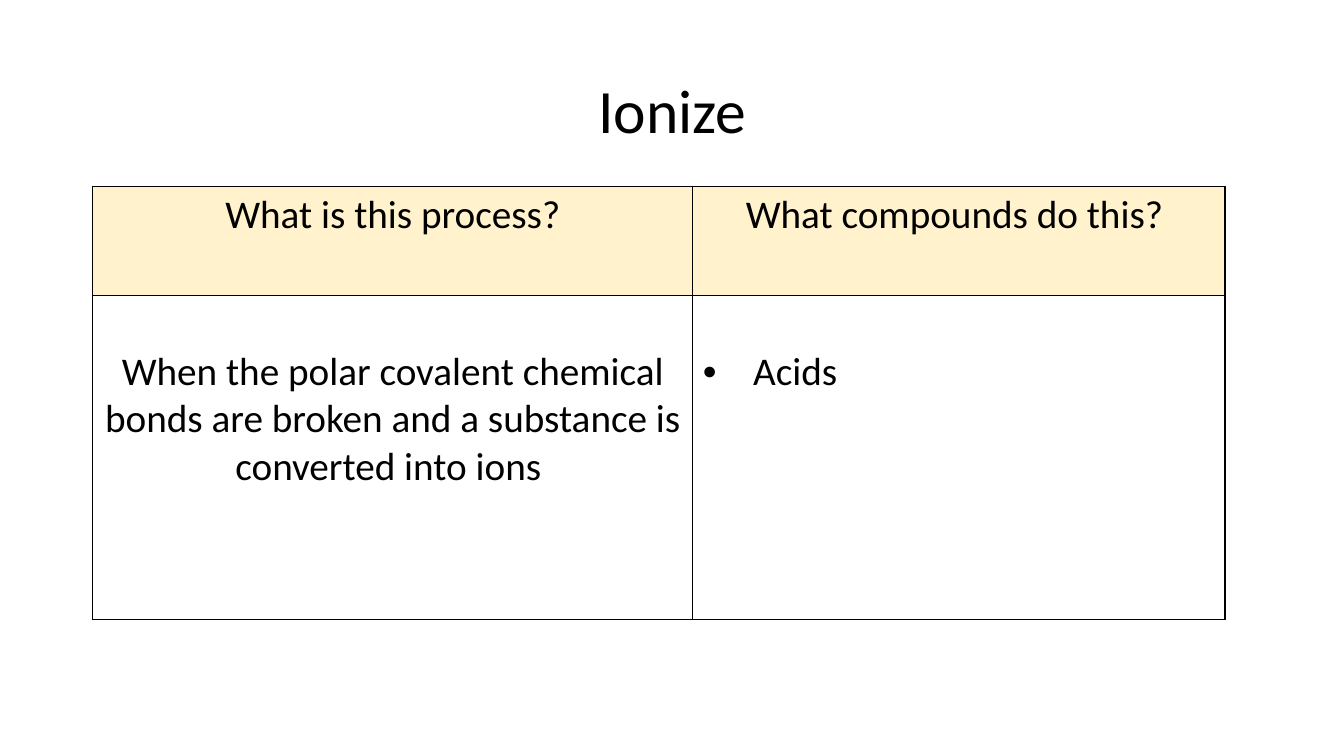
from lxml.etree import SubElement
from pptx import Presentation
from pptx.dml.color import RGBColor
from pptx.enum.text import MSO_ANCHOR, PP_ALIGN
from pptx.oxml.ns import qn
from pptx.util import Inches, Pt

FONT = "Calibri"
BLACK = "000000"
CREAM = "FFF2CC"
COLUMN_WIDTHS = (5.95, 5.28)
ROW_HEIGHTS = (1.08, 3.22)
HEADINGS = ("What is this process?", "What compounds do this? ")
DEFINITION = (
    "When the polar covalent chemical bonds are broken "
    "and a substance is converted into ions "
)
COMPOUNDS = "Acids"


def color(hex_string):
    return RGBColor.from_string(hex_string)


def style_paragraph(paragraph, size, alignment):
    paragraph.alignment = alignment
    for span in paragraph.runs:
        span.font.name = FONT
        span.font.size = Pt(size)
        span.font.bold = False
        span.font.color.rgb = color(BLACK)


def add_title(page, text, left, top, width, height):
    title = page.shapes.title
    title.left, title.top = Inches(left), Inches(top)
    title.width, title.height = Inches(width), Inches(height)
    frame = title.text_frame
    frame.text = text
    frame.vertical_anchor = MSO_ANCHOR.MIDDLE
    paragraph = frame.paragraphs[0]
    paragraph.line_spacing = 0.9
    style_paragraph(paragraph, 44, PP_ALIGN.CENTER)


def set_borders(cell):
    properties = cell._tc.get_or_add_tcPr()
    for side in ("lnL", "lnR", "lnT", "lnB"):
        line = SubElement(properties, qn(f"a:{side}"), w=str(Pt(1)))
        fill = SubElement(line, qn("a:solidFill"))
        SubElement(fill, qn("a:srgbClr"), val=BLACK)


def set_bullet(paragraph, indent):
    properties = paragraph._p.get_or_add_pPr()
    properties.set("marL", str(Inches(indent)))
    properties.set("indent", str(-Inches(indent)))
    SubElement(properties, qn("a:buFont"), typeface="Arial")
    SubElement(properties, qn("a:buChar"), char="•")


def fill_cell(cell, text, background=None, alignment=PP_ALIGN.CENTER):
    set_borders(cell)
    if background:
        cell.fill.solid()
        cell.fill.fore_color.rgb = color(background)
    else:
        cell.fill.background()
    cell.text_frame.text = text
    style_paragraph(cell.text_frame.paragraphs[0], 28, alignment)


def add_process_table(page, left, top):
    frame = page.shapes.add_table(
        len(ROW_HEIGHTS), len(COLUMN_WIDTHS), Inches(left), Inches(top),
        Inches(sum(COLUMN_WIDTHS)), Inches(sum(ROW_HEIGHTS)),
    )
    table = frame.table
    table.horz_banding = False
    for column, width in zip(table.columns, COLUMN_WIDTHS):
        column.width = Inches(width)
    for row, height in zip(table.rows, ROW_HEIGHTS):
        row.height = Inches(height)

    for index, heading in enumerate(HEADINGS):
        fill_cell(table.cell(0, index), heading, CREAM)
        table.cell(1, index).margin_top = Inches(0.52)
    fill_cell(table.cell(1, 0), DEFINITION)
    compounds = table.cell(1, 1)
    fill_cell(compounds, COMPOUNDS, alignment=PP_ALIGN.LEFT)
    set_bullet(compounds.text_frame.paragraphs[0], 0.5)


def main():
    deck = Presentation()
    deck.slide_width, deck.slide_height = Inches(13.33), Inches(7.5)
    page = deck.slides.add_slide(deck.slide_layouts[5])
    add_title(page, "Ionize", 0.92, 0.4, 11.5, 1.45)
    add_process_table(page, 0.92, 1.85)
    deck.save("out.pptx")


if __name__ == "__main__":
    main()
